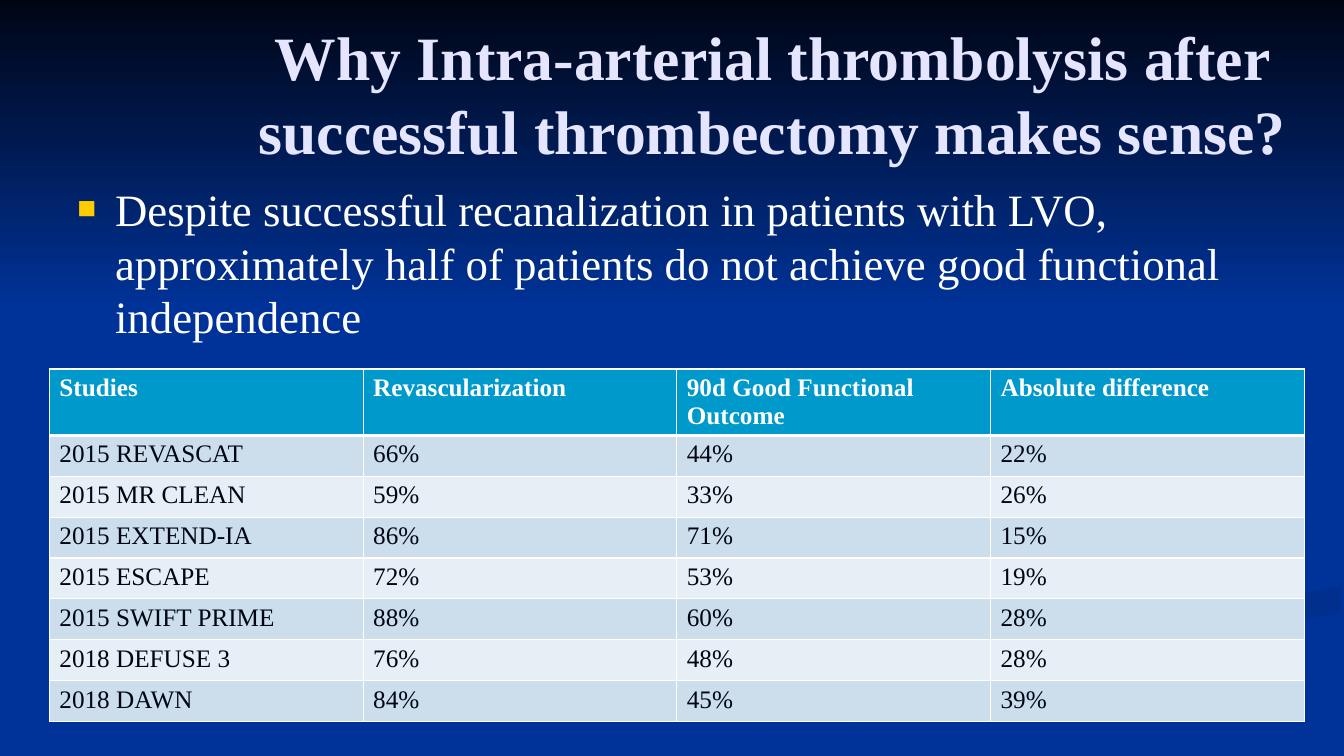
import pptx
import pptx.util
import pptx.dml.color
import pptx.enum.shapes
import pptx.enum.text
import pptx.oxml
import pptx.oxml.ns

Pt = pptx.util.Pt
RGBColor = pptx.dml.color.RGBColor
PP_ALIGN = pptx.enum.text.PP_ALIGN
ANCHOR = pptx.enum.text.MSO_ANCHOR

BLUE = RGBColor(0x00, 0x33, 0x99)
NAVY = RGBColor(0x00, 0x05, 0x14)
SHADE = RGBColor(0x00, 0x2F, 0x8D)
LAVENDER = RGBColor(0xE5, 0xE5, 0xFF)
WHITE = RGBColor(0xFF, 0xFF, 0xFF)
GOLD = RGBColor(0xFF, 0xCC, 0x00)
HEADER = RGBColor(0x00, 0x99, 0xCC)
BANDS = (RGBColor(0xCC, 0xDE, 0xEC), RGBColor(0xE7, 0xEF, 0xF6))
FONT = "Times New Roman"

# Content
TITLE = "Why Intra-arterial thrombolysis after successful thrombectomy makes sense?"
BODY = ("Despite successful recanalization in patients with LVO, approximately half "
        "of patients do not achieve good functional independence")
ROWS = [
    ("Studies", "Revascularization", "90d Good Functional Outcome", "Absolute difference"),
    ("2015 REVASCAT", "66%", "44%", "22%"),
    ("2015 MR CLEAN", "59%", "33%", "26%"),
    ("2015 EXTEND-IA", "86%", "71%", "15%"),
    ("2015 ESCAPE", "72%", "53%", "19%"),
    ("2015 SWIFT PRIME", "88%", "60%", "28%"),
    ("2018 DEFUSE 3", "76%", "48%", "28%"),
    ("2018 DAWN", "84%", "45%", "39%"),
]

# Background ribbons: clockwise gradient angle and outline in points
RIBBONS = [
    (90, [(483, 539), (549, 539), (693, 491), (826, 461), (958, 438),
          (958, 418), (798, 453), (635, 490)]),
    (45, [(750, 331), (793, 357), (774, 337), (842, 316), (958, 302),
          (958, 289), (815, 307)]),
    (45, [(656, 310), (791, 289), (853, 261), (854, 233), (809, 198), (732, 168),
          (820, 205), (853, 245), (818, 269), (649, 298), (554, 333), (597, 360),
          (572, 332)]),
]


def set_all(obj, values):
    for name, value in values.items():
        setattr(obj, name, value)


def paint(sp, first, last, angle):
    sp.shadow.inherit = False
    sp.line.fill.background()
    sp.fill.gradient()
    sp.fill.gradient_angle = -angle % 360
    for stop, color in zip(sp.fill.gradient_stops, (first, last)):
        stop.color.rgb = color


def add_xml(parent, xml):
    ns = pptx.oxml.ns.nsdecls("a")
    parent.append(pptx.oxml.parse_xml(xml.replace(">", f" {ns}>", 1)))


def write(tf, text, size, color, bold=False):
    p = tf.paragraphs[0]
    r = p.add_run()
    r.text = text
    set_all(r.font, {"name": FONT, "size": Pt(size), "bold": bold})
    r.font.color.rgb = color
    return p


prs = pptx.Presentation()
set_all(prs, {"slide_width": Pt(960), "slide_height": Pt(540)})
slide = prs.slides.add_slide(prs.slide_layouts[1])
slide.background.fill.solid()
slide.background.fill.fore_color.rgb = BLUE
title, body = slide.placeholders

# Background: ribbons and the dark band at the top
for angle, points in RIBBONS:
    builder = slide.shapes.build_freeform(*points[0], scale=Pt(1))
    builder.add_line_segments(points[1:], close=True)
    paint(builder.convert_to_shape(), SHADE, BLUE, angle)
sky = slide.shapes.add_shape(pptx.enum.shapes.MSO_SHAPE.RECTANGLE, 0, 0, Pt(960), Pt(222))
paint(sky, NAVY, BLUE, 90)

# Title and bullet, in front of the background
for sp, box, anchor in ((title, (144, 21.6, 816, 90), ANCHOR.MIDDLE),
                        (body, (48, 126, 864, 356.4), ANCHOR.TOP)):
    set_all(sp, dict(zip(("left", "top", "width", "height"), map(Pt, box))))
    set_all(sp.text_frame, {"word_wrap": True, "vertical_anchor": anchor,
                            "auto_size": pptx.enum.text.MSO_AUTO_SIZE.NONE})
    slide.shapes._spTree.append(sp._element)
write(title.text_frame, TITLE, 44, LAVENDER, True).alignment = PP_ALIGN.CENTER
p = write(body.text_frame, BODY, 32, WHITE)
p.space_before = Pt(0)
pPr = p._p.get_or_add_pPr()
pPr.set("marL", str(Pt(27)))
pPr.set("indent", str(-Pt(27)))
for xml in (f'<a:buClr><a:srgbClr val="{GOLD}"/></a:buClr>',
            '<a:buSzPct val="70000"></a:buSzPct>',
            f'<a:buFont typeface="{FONT}"></a:buFont>',
            '<a:buChar char="■"></a:buChar>'):
    add_xml(pPr, xml)

# Table of studies
HEADER_HEIGHT, ROW_HEIGHT = 47.5, 29.2
table = slide.shapes.add_table(len(ROWS), len(ROWS[0]), Pt(35.3), Pt(263.5), Pt(896.4),
                               Pt(HEADER_HEIGHT + ROW_HEIGHT * (len(ROWS) - 1))).table
for i, row in enumerate(ROWS):
    head = i == 0
    table.rows[i].height = Pt(HEADER_HEIGHT if head else ROW_HEIGHT)
    for j, text in enumerate(row):
        cell = table.cell(i, j)
        write(cell.text_frame, text, 18, WHITE if head else NAVY, head)
        tcPr = cell._tc.get_or_add_tcPr()
        for side in "LRTB":
            heavy = (head and side == "B") or (i == 1 and side == "T")
            add_xml(tcPr, f'<a:ln{side} w="{Pt(3 if heavy else 1)}"><a:solidFill>'
                          f'<a:srgbClr val="{WHITE}"/></a:solidFill></a:ln{side}>')
        cell.fill.solid()
        cell.fill.fore_color.rgb = HEADER if head else BANDS[(i - 1) % 2]

prs.save("out.pptx")
